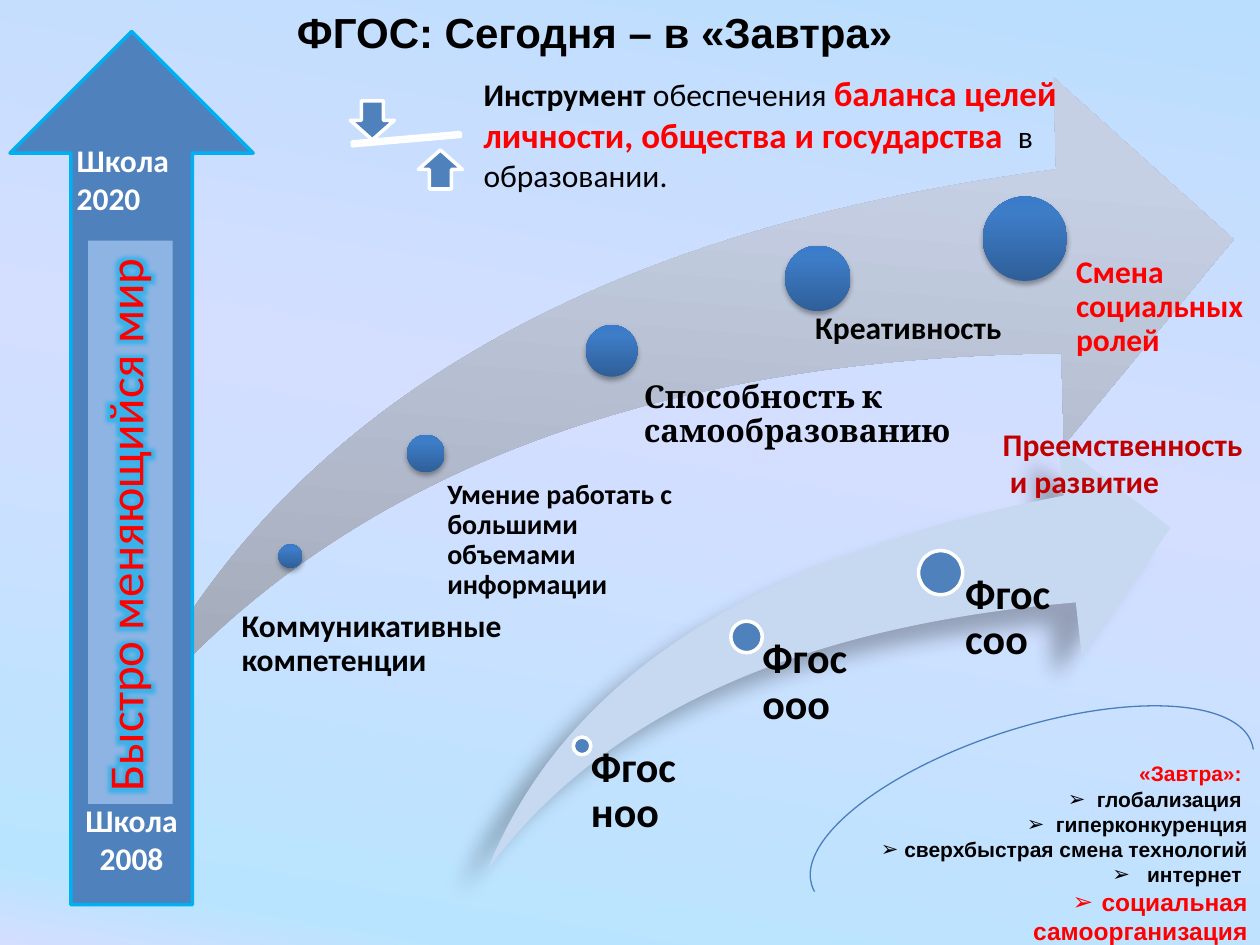
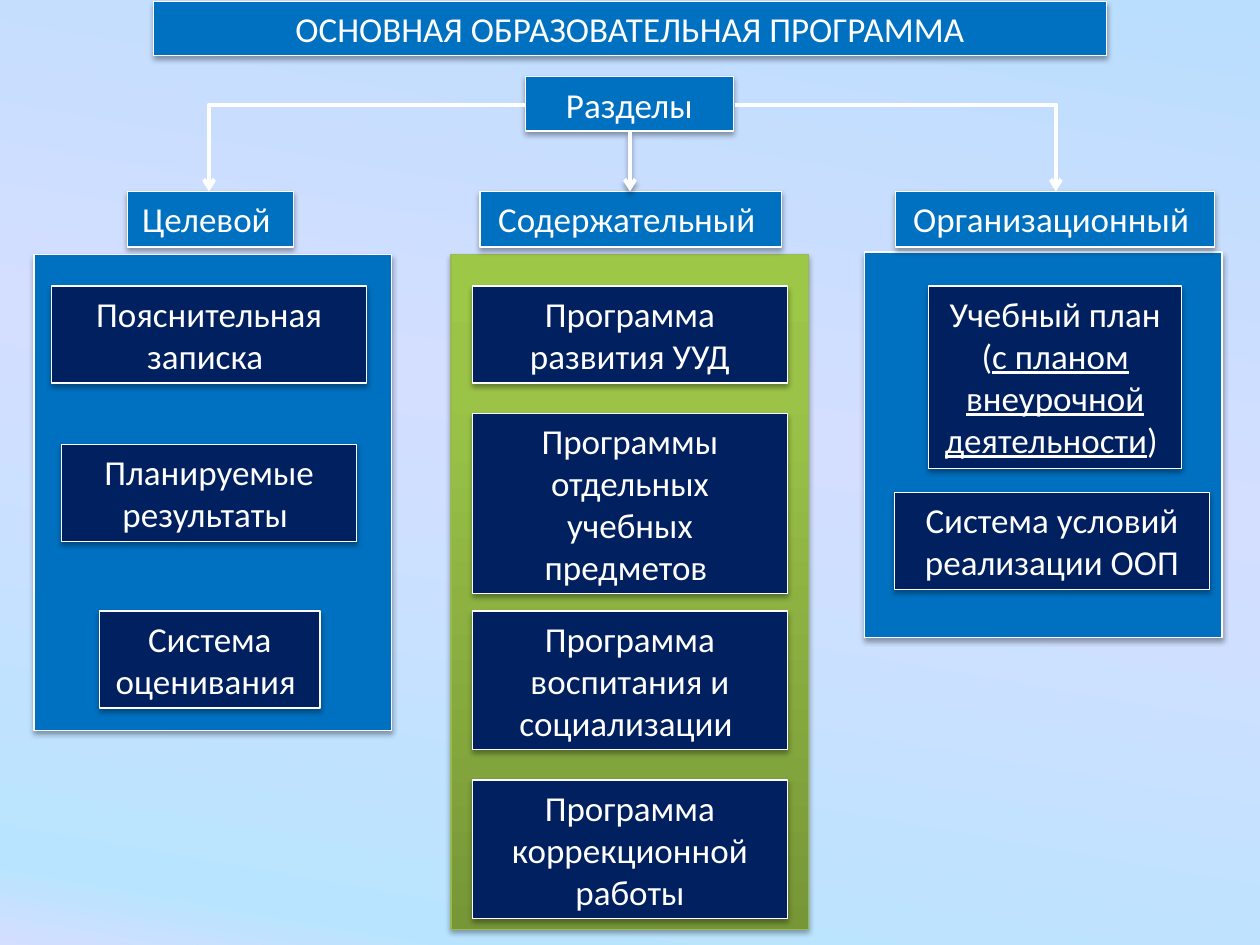
from dataclasses import dataclass
from pptx import Presentation
from pptx.dml.color import RGBColor
from pptx.enum import shapes, text
from pptx.oxml import parse_xml
from pptx.oxml.ns import nsdecls, qn
from pptx.util import Inches, Pt


@dataclass
class Theme:
    white: str = "FFFFFF"
    black: str = "000000"
    red: str = "FF0000"
    crimson: str = "C00000"
    blue: str = "4F81BD"
    azure: str = "0070C0"
    navy: str = "002060"
    cyan: str = "00B0F0"
    pale: str = "C6D9F1"
    band: str = "8EB4E3"
    steel: str = "B3C1DB"
    curve: str = "4B7EBC"
    moss: str = "98B955"
    sky: tuple = ((0, "BADEFE"), (45, "D4DEFF"), (93, "B9E4FF"), (100, "D4DEFF"), (100, "96AB94"))
    ball: tuple = ((0, "2F5F99"), (80, "3D7CC7"), (100, "3A7CCB"))
    silver: tuple = ((0, "99A0AF"), (80, "C6D0E4"), (100, "C7D1E5"))
    green: tuple = ((0, "779737"), (80, "9BC348"), (100, "9DC746"))
    soft: tuple = (35, 3.1, 1.8, 90)
    deep: tuple = (28, 11.8, 19.7, 141)
    tiny: int = 12
    note: int = 14
    small: int = 16
    body: int = 18
    large: int = 20
    head: int = 24
    huge: int = 28
    font: str = "Calibri"
    sans: str = "Arial"
    serif: str = "Cambria"


T = Theme()
S = shapes.MSO_SHAPE
LEFT, MID, RIGHT = text.PP_ALIGN.LEFT, text.PP_ALIGN.CENTER, text.PP_ALIGN.RIGHT
NS = nsdecls("a")
FLAT = f"<a:effectLst {NS}/>"
SHADE = (f'<a:effectLst {NS}><a:outerShdw blurRad="%d" dist="%d" dir="%d" rotWithShape="0">'
         '<a:srgbClr val="000000"><a:alpha val="%d"/></a:srgbClr></a:outerShdw></a:effectLst>')
GLOW = (f'<a:effectLst {NS}><a:glow rad="177800"><a:srgbClr val="{T.cyan}">'
        '<a:alpha val="60000"/></a:srgbClr></a:glow></a:effectLst>')


def tint(host, fill, stops, angle):
    fill.gradient()
    fill.gradient_angle = 360 - angle
    ramp = host.element.find(".//" + qn("a:gsLst"))
    for old in list(ramp):
        ramp.remove(old)
    for spot, shade in stops:
        ramp.append(parse_xml(f'<a:gs {NS} pos="{spot * 1000}"><a:srgbClr val="{shade}"/></a:gs>'))


def put(page, kind, box, fill=None, line=None, shade=None, rows=(), align=LEFT,
        inset=None, wrap=True, anchor=text.MSO_ANCHOR.TOP, turn=0, **style):
    spot = [Inches(v) for v in box]
    if kind is None:
        shape = page.shapes.add_textbox(*spot)
    else:
        shape = page.shapes.add_shape(kind, *spot)
        shape.rotation = turn
        if fill is None:
            shape.fill.background()
        elif isinstance(fill, str):
            shape.fill.solid()
            shape.fill.fore_color.rgb = RGBColor.from_string(fill)
        else:
            tint(shape, shape.fill, fill, 270)
        if line:
            shape.line.color.rgb = RGBColor.from_string(line[0])
            shape.line.width = Pt(line[1])
        else:
            shape.line.fill.background()
        cast = FLAT
        if shade:
            alpha, blur, dist, way = shade
            cast = SHADE % (Pt(blur), Pt(dist), way * 60000, alpha * 1000)
        shape.element.spPr.append(parse_xml(cast))
    frame = shape.text_frame
    frame.word_wrap = wrap
    frame.vertical_anchor = anchor
    if inset is not None:
        frame.margin_left = Inches(inset)
        frame.margin_top = frame.margin_right = frame.margin_bottom = 0
    base = dict(size=T.body, ink=T.black, bold=False, line=False, font=T.font) | style
    for i, row in enumerate(rows):
        para = frame.add_paragraph() if i else frame.paragraphs[0]
        para.alignment = align
        if inset is not None:
            para.line_spacing = 0.9
        for words, change in [(row, {})] if isinstance(row, str) else row:
            look = base | change
            for j, part in enumerate(words.split("\v")):
                if j:
                    para.add_line_break()
                run = para.add_run()
                run.text = part
                run.font.size = Pt(look["size"])
                run.font.name = look["font"]
                run.font.bold = look["bold"]
                run.font.underline = look["line"]
                run.font.color.rgb = RGBColor.from_string(look["ink"])
    return shape


deck = Presentation()
deck.slide_width, deck.slide_height = Inches(10), Inches(7.5)
pages = [deck.slides.add_slide(deck.slide_layouts[6]) for _ in range(2)]
for page in pages:
    tint(page, page.background.fill, T.sky, 100)
first, last = pages

swoosh = put(first, S.SWOOSH_ARROW, (1.2, 0.38, 8.46, 5.8), T.silver, turn=4.8)
swoosh.adjustments[0] = swoosh.adjustments[1] = 0.25
skills = [
    ((2.21, 4.32, 0.19), (1.82, 4.84, 2.2, 1.26), 0.1, "Коммуникативные компетенции", {}),
    ((3.23, 3.45, 0.3), (3.39, 3.81, 2.07, 2.22), 0.16,
     "Умение работать с большими объемами информации", {"size": T.small}),
    ((4.65, 2.58, 0.41), (4.89, 3.03, 2.97, 2.97), 0.22,
     "Способность к самообразованию", {"font": T.serif}),
    ((6.23, 1.95, 0.52), (6.19, 2.48, 2.24, 3.54), 0.28, "Креативность", {}),
    ((7.8, 1.56, 0.67), (8.19, 2.03, 1.69, 3.89), 0.35, "Смена социальных ролей", {"ink": T.red}),
]
for (x, y, d), box, inset, words, look in skills:
    put(first, S.OVAL, (x, y, d, d), T.ball, shade=T.soft)
    put(first, None, box, rows=[words], inset=inset, bold=True, **look)

tower = put(first, S.UP_ARROW, (0.08, 0.25, 1.93, 6.93), T.blue, (T.cyan, 2),
            rows=["Школа 2008"], align=MID, anchor=text.MSO_ANCHOR.BOTTOM,
            ink=T.white, bold=True)
tower.text_frame.margin_bottom = Inches(0.22)
put(first, None, (0.51, 1.07, 0.99, 0.71), rows=["Школа", "2020"], wrap=False,
    ink=T.white, bold=True)
put(first, None, (1.46, 0, 6.52, 0.5), rows=["ФГОС: Сегодня – в «Завтра»"], align=MID,
    size=T.head, font=T.sans, bold=True)

red = {"ink": T.red}
goals = put(first, None, (6.89, 5.99, 3.11, 1.78), align=RIGHT, size=T.tiny, font=T.sans,
            bold=True, rows=[
                [("«Завтра»: ", red)], "глобализация ", "гиперконкуренция",
                " сверхбыстрая смена технологий", " интернет ",
                [("социальная самоорганизация", red | {"size": T.note})]])
goals.text_frame.margin_left = 0
for para, hang in zip(goals.text_frame.paragraphs[1:], (0.23, 0.23, 0, 0.23, 0.23)):
    props = para._p.get_or_add_pPr()
    props.set("marL", str(Inches(hang)))
    props.set("indent", str(-Inches(hang)))
    props.append(parse_xml(f'<a:buFont {NS} typeface="{T.sans}"/>'))
    props.append(parse_xml(f'<a:buChar {NS} char="➢"/>'))

world = put(first, S.RECTANGLE, (0.7, 1.91, 0.67, 4.47), T.band,
            rows=["Быстро меняющийся мир"], wrap=False, size=T.huge, ink=T.red)
world.element.find(".//" + qn("a:bodyPr")).set("vert", "vert270")
world.element.find(".//" + qn("a:rPr")).find(qn("a:solidFill")).addnext(parse_xml(GLOW))

arc = put(first, S.ARC, (7.5, 4.63, 1.38, 3.67), line=(T.curve, 0.75), turn=252.2)
for i, angle in enumerate((268.3, 91.4)):
    arc.adjustments[i] = angle * 0.6

edge = (T.white, 2)
put(first, S.MATH_MINUS, (2.64, 1.04, 1.17, 0.13), T.steel, edge, turn=355)
put(first, S.DOWN_ARROW, (2.78, 0.8, 0.35, 0.31), T.blue, edge)
put(first, S.UP_ARROW, (3.32, 1.19, 0.35, 0.31), T.blue, edge)
put(first, None, (3.74, 0.52, 5, 1.08), rows=[[
    ("Инструмент", {"bold": True}), (" обеспечения ", {}),
    ("баланса целей личности, общества и государства ",
     {"size": T.large, "ink": T.red, "bold": True}),
    (" в образовании.", {})]])

swoosh = put(first, S.SWOOSH_ARROW, (3.87, 3.51, 5.42, 3.39), T.pale, shade=T.deep)
swoosh.adjustments[0] = swoosh.adjustments[1] = 0.25
stages = [
    ((4.55, 5.85, 0.14), (4.62, 5.92, 1.26, 0.98), 0.07, "Фгос ноо"),
    ((5.8, 4.93, 0.25), (5.92, 5.06, 1.3, 1.84), 0.13, "Фгос ооо"),
    ((7.29, 4.37, 0.35), (7.47, 4.55, 1.3, 2.35), 0.19, "Фгос соо"),
]
for (x, y, d), box, inset, words in stages:
    put(first, S.OVAL, (x, y, d, d), T.blue, edge)
    put(first, None, box, rows=[words], inset=inset, size=T.head, bold=True)
put(first, None, (7.86, 3.32, 2.12, 0.71), rows=["Преемственность", " и развитие"],
    wrap=False, ink=T.crimson, bold=True)

thin = (T.white, 0.75)
under = {"line": True}
parts = [
    ((0.27, 2.02, 2.84, 3.78), T.azure, thin, (1.01, 1.32), "Целевой ", [
        ((0.41, 2.27, 2.5, 0.77), "Пояснительная записка "),
        ((0.49, 3.53, 2.34, 0.77), "Планируемые результаты "),
        ((0.79, 4.85, 1.75, 0.77), "Система\vоценивания ")]),
    ((3.58, 2.02, 2.84, 5.36), T.green, (T.moss, 0.75), (3.81, 2.39), "Содержательный ", [
        ((3.75, 2.27, 2.5, 0.77), "Программа развития УУД"),
        ((3.75, 3.28, 2.5, 1.43), "Программы отдельных учебных предметов "),
        ((3.75, 4.85, 2.5, 1.1), "Программа воспитания и социализации "),
        ((3.75, 6.19, 2.5, 1.1), "Программа коррекционной работы")]),
    ((6.86, 2, 2.84, 3.06), T.azure, thin, (7.11, 2.53), "Организационный ", [
        ((7.37, 2.27, 2.01, 1.45), [
            ("Учебный план\v(", {}), ("с планом\vвнеурочной\vдеятельности", under), (") ", {})]),
        ((7.1, 3.91, 2.5, 0.77), "Система условий реализации ООП")]),
]
label = dict(line=thin, shade=T.soft, align=MID, size=T.large, ink=T.white)
for panel, fill, rim, (x, w), name, items in parts:
    put(last, S.RECTANGLE, panel, fill, rim, T.soft)
    put(last, S.RECTANGLE, (x, 1.52, w, 0.44), T.azure, rows=[name], wrap=False, **label)
    for box, words in items:
        fit = isinstance(words, str) and "\v" not in words
        put(last, S.RECTANGLE, box, T.navy, rows=[words], wrap=fit, **label)
put(last, S.RECTANGLE, (1.22, 0.01, 7.56, 0.43), T.azure,
    rows=["ОСНОВНАЯ ОБРАЗОВАТЕЛЬНАЯ ПРОГРАММА"], **label)
put(last, S.RECTANGLE, (4.17, 0.61, 1.65, 0.43), T.azure, rows=["Разделы"], **label)

alpha, blur, dist, way = T.soft
drop = SHADE % (Pt(blur), Pt(dist), way * 60000, alpha * 1000)
C = shapes.MSO_CONNECTOR
for kind, x, y, end, cast in [(C.STRAIGHT, 5, 1.05, 5, drop),
                              (C.ELBOW, 4.17, 0.83, 1.66, FLAT),
                              (C.ELBOW, 5.83, 0.83, 8.38, FLAT)]:
    link = last.shapes.add_connector(kind, Inches(x), Inches(y), Inches(end), Inches(1.52))
    link.line.color.rgb = RGBColor.from_string(T.white)
    link.line.width = Pt(2.25)
    props = link.element.spPr
    if kind == C.ELBOW:
        props.find(qn("a:prstGeom")).set("prst", "bentConnector2")
    props.find(qn("a:ln")).append(parse_xml(f'<a:tailEnd {NS} type="arrow"/>'))
    props.append(parse_xml(cast))

deck.save("out.pptx")
